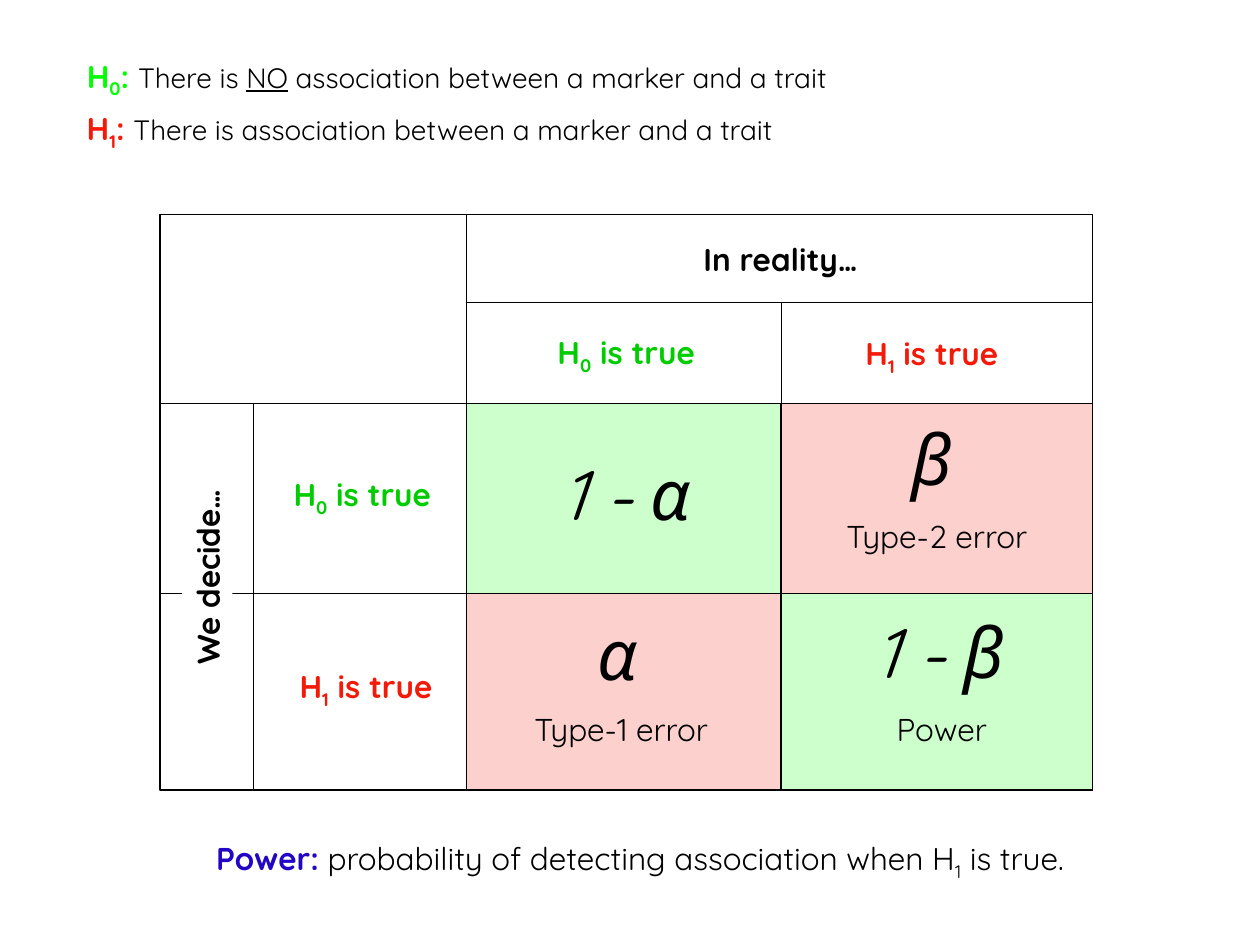
from dataclasses import dataclass

from lxml import etree
from pptx import Presentation
from pptx.dml.color import RGBColor
from pptx.enum.shapes import MSO_CONNECTOR, MSO_SHAPE
from pptx.enum.text import MSO_AUTO_SIZE, PP_ALIGN
from pptx.oxml.ns import qn
from pptx.util import Inches, Pt

STRAIGHT = MSO_CONNECTOR.STRAIGHT
RECTANGLE = MSO_SHAPE.RECTANGLE
LEFT, CENTER = PP_ALIGN.LEFT, PP_ALIGN.CENTER
FIT_SHAPE = MSO_AUTO_SIZE.SHAPE_TO_FIT_TEXT

FONT = "Quicksand"
BLACK, WHITE = "000000", "FFFFFF"
RED, GREEN, LIME, BLUE = "F31A09", "00CC00", "00FF00", "2106C6"
TINT = 20

# Edges of the decision table, in inches
COLUMNS = [1.27, 2.01, 3.7, 6.2, 8.67]
ROWS = [1.7, 2.4, 3.2, 4.71, 6.27]
LINE_HEIGHT, SYMBOL_HEIGHT = 0.4, 0.77


@dataclass
class Words:
    text: str
    color: str = BLACK
    size: float = 18
    bold: bool = False
    italic: bool = False
    underline: bool = False
    subscript: bool = False


@dataclass
class Label:
    """Text centred in a cell: share is its height in the row, shift is inches sideways."""
    column: int
    row: int
    share: float
    width: float
    words: list[Words]
    shift: float = 0
    span: int = 1
    height: float = LINE_HEIGHT


def rgb(color: str) -> RGBColor:
    return RGBColor.from_string(color)


def hypothesis(number: str, color: str, ending: str) -> list[Words]:
    return [Words("H", color, bold=True),
            Words(number, color, bold=True, subscript=True),
            Words(ending, color, bold=True)]


def symbol(text: str) -> list[Words]:
    return [Words(text, size=40, italic=True)]


def write(shape, words: list[Words], align=CENTER) -> None:
    frame = shape.text_frame
    frame.word_wrap = True
    frame.auto_size = FIT_SHAPE
    para = frame.paragraphs[0]
    para.alignment = align
    for part in words:
        span = para.add_run()
        span.text = part.text
        font = span.font
        font.name, font.size = FONT, Pt(part.size)
        font.bold, font.italic, font.underline = part.bold, part.italic, part.underline
        font.color.rgb = rgb(part.color)
        if part.subscript:
            span._r.get_or_add_rPr().set("baseline", "-25000")


def add_text(slide, left: float, top: float, width: float, height: float,
             words: list[Words], align=CENTER) -> None:
    box = slide.shapes.add_textbox(*map(Inches, (left, top, width, height)))
    write(box, words, align)


def add_label(slide, label: Label) -> None:
    middle = (COLUMNS[label.column] + COLUMNS[label.column + label.span]) / 2 + label.shift
    top, bottom = ROWS[label.row], ROWS[label.row + 1]
    center = top + label.share * (bottom - top)
    add_text(slide, middle - label.width / 2, center - label.height / 2,
             label.width, label.height, label.words)


def add_block(slide, columns: tuple[int, int], rows: tuple[int, int], tint: str = ""):
    """Outline the area between two column edges and two row edges."""
    left, right = (COLUMNS[index] for index in columns)
    top, bottom = (ROWS[index] for index in rows)
    block = slide.shapes.add_shape(
        RECTANGLE, *map(Inches, (left, top, right - left, bottom - top)))
    block.shadow.inherit = False
    block.line.color.rgb = rgb(BLACK)
    block.line.width = Pt(0.75)
    if not tint:
        block.fill.background()
        return
    block.fill.solid()
    block.fill.fore_color.rgb = rgb(tint)
    color = block._element.spPr.find(qn("a:solidFill")).find(qn("a:srgbClr"))
    etree.SubElement(color, qn("a:alpha")).set("val", str(TINT * 1000))


def add_rule(slide, start: tuple[int, int], end: tuple[int, int]) -> None:
    """Draw a line between two (column, row) grid points."""
    points = [Inches(length) for column, row in (start, end)
              for length in (COLUMNS[column], ROWS[row])]
    rule = slide.shapes.add_connector(STRAIGHT, *points)
    rule.line.color.rgb = rgb(BLACK)
    rule.line.width = Pt(0.75)
    etree.SubElement(rule._element.spPr, qn("a:effectLst"))


def add_side_heading(slide) -> None:
    heading = slide.shapes.add_shape(
        RECTANGLE, *map(Inches, (0.34, 4.38, 2.61, LINE_HEIGHT)))
    heading.rotation = 270
    heading.shadow.inherit = False
    heading.fill.solid()
    heading.fill.fore_color.rgb = rgb(WHITE)
    heading.line.fill.background()
    write(heading, [Words("We decide…", bold=True)])


CELLS = [(2, 2, LIME), (3, 2, RED), (2, 3, RED), (3, 3, LIME)]
RULES = [((0, 2), (4, 2)), ((0, 3), (4, 3)), ((2, 1), (4, 1)),
         ((1, 2), (1, 4)), ((2, 0), (2, 4)), ((3, 1), (3, 4))]
H0_TRUE = hypothesis("0", GREEN, " is true")
H1_TRUE = hypothesis("1", RED, " is true")
LABELS = [
    Label(2, 0, 0.51, 2.61, [Words("In reality…", bold=True)], 0.01, span=2),
    Label(2, 1, 0.49, 1.45, H0_TRUE, 0.02),
    Label(3, 1, 0.5, 1.45, H1_TRUE, -0.04),
    Label(1, 2, 0.48, 1.45, H0_TRUE, 0.02),
    Label(1, 3, 0.47, 1.45, H1_TRUE, 0.05),
    Label(2, 2, 0.47, 1.89, symbol("1 - α"), 0.02, height=SYMBOL_HEIGHT),
    Label(3, 2, 0.29, 1.26, symbol("β"), -0.04, height=SYMBOL_HEIGHT),
    Label(3, 2, 0.7, 1.69, [Words("Type-2 error")]),
    Label(2, 3, 0.3, 1.26, symbol("α"), -0.05, height=SYMBOL_HEIGHT),
    Label(2, 3, 0.69, 1.69, [Words("Type-1 error")], -0.02),
    Label(3, 3, 0.29, 1.94, symbol("1 - β"), 0.02, height=SYMBOL_HEIGHT),
    Label(3, 3, 0.69, 1.69, [Words("Power")], 0.04),
]
NULL = hypothesis("0", LIME, ": ") + [
    Words("There is ", size=16), Words("NO", size=16, underline=True),
    Words(" association between a marker and a trait", size=16)]
ALTERNATIVE = hypothesis("1", RED, ": ") + [
    Words("There is association between a marker and a trait", size=16)]
POWER = [Words("Power:", BLUE, bold=True),
         Words(" probability of detecting association when H"),
         Words("1", subscript=True), Words(" is true.")]


def main() -> None:
    deck = Presentation()
    deck.slide_width, deck.slide_height = Inches(10), Inches(7.5)
    slide = deck.slides.add_slide(deck.slide_layouts[6])

    add_text(slide, 0.59, 0.4, 7.09, LINE_HEIGHT, NULL, LEFT)
    add_text(slide, 0.59, 0.82, 6.3, LINE_HEIGHT, ALTERNATIVE, LEFT)
    for column, row, tint in CELLS:
        add_block(slide, (column, column + 1), (row, row + 1), tint)
    add_block(slide, (0, 4), (0, 4))
    for start, end in RULES:
        add_rule(slide, start, end)
    for label in LABELS:
        add_label(slide, label)
    add_side_heading(slide)
    add_text(slide, 0.51, 6.61, 9.14, LINE_HEIGHT, POWER)
    deck.save("out.pptx")


if __name__ == "__main__":
    main()
